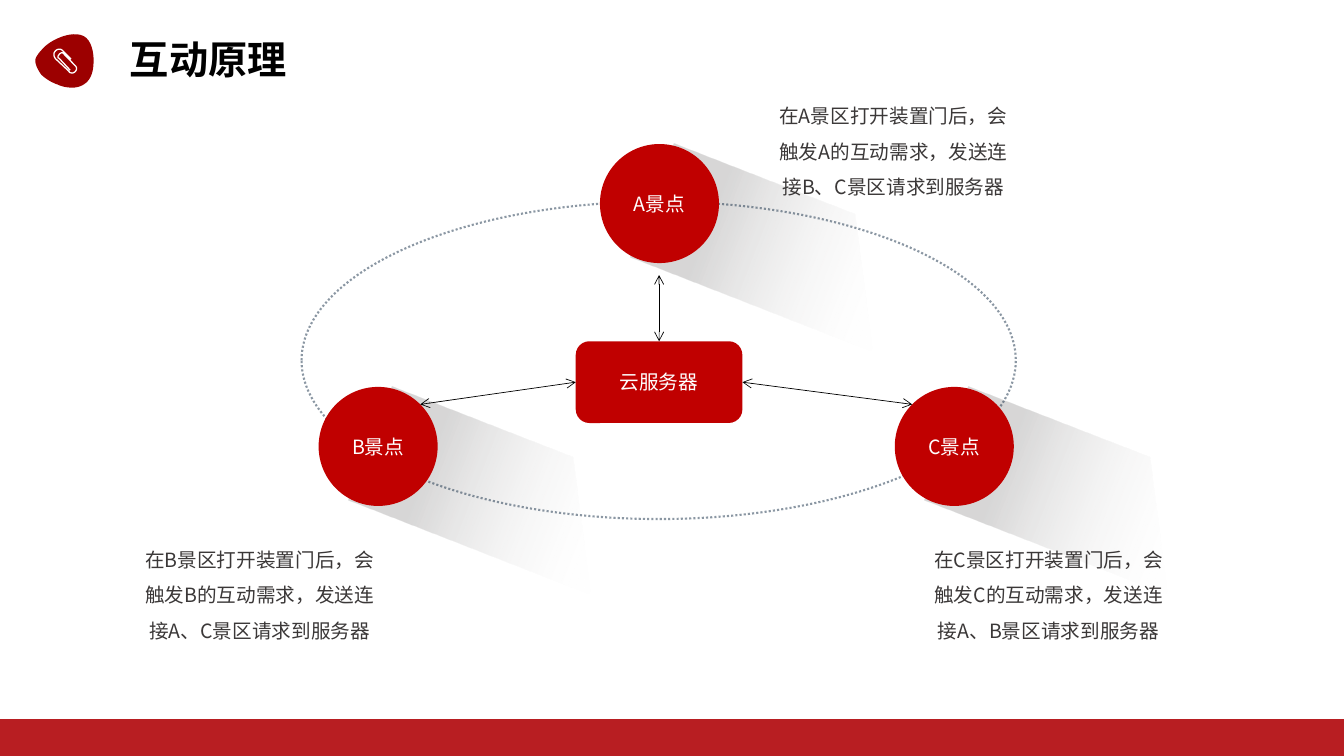
from lxml import etree
from pptx import Presentation
from pptx.dml.color import RGBColor
from pptx.enum.dml import MSO_LINE
from pptx.enum.shapes import MSO_CONNECTOR, MSO_SHAPE
from pptx.enum.text import MSO_ANCHOR, PP_ALIGN
from pptx.oxml import parse_xml
from pptx.oxml.ns import nsdecls, qn
from pptx.util import Cm, Pt

STRAIGHT = MSO_CONNECTOR.STRAIGHT
OVAL, RECTANGLE = MSO_SHAPE.OVAL, MSO_SHAPE.RECTANGLE
ROUNDED = MSO_SHAPE.ROUNDED_RECTANGLE
DOTTED = MSO_LINE.ROUND_DOT
LEFT, CENTER = PP_ALIGN.LEFT, PP_ALIGN.CENTER
TOP, MIDDLE = MSO_ANCHOR.TOP, MSO_ANCHOR.MIDDLE
BOX_TOP, BOX_LEFT, BOX_RIGHT = 0, 1, 3

COLORS = {
    "red": "C00000", "badge": "9C0000", "footer": "B81E22", "white": "FFFFFF",
    "black": "000000", "text": "3B3838", "orbit": "183048", "fade": "F2F2F2",
}
FONT = "Noto Sans CJK SC"
PAGE_WIDTH, PAGE_HEIGHT = 33.87, 19.05
FOOTER_TOP = 18.12
SPOT_SIZE = 3

# name: (circle left, circle top, description left, description top)
SPOTS = {
    "A": (15.12, 3.63, 19.15, 2.21),
    "B": (8.03, 9.75, 3.18, 13.39),
    "C": (22.55, 9.75, 23.06, 13.39),
}
# Corners of the long shadow, measured from the circle's top left
SHADOW = [(1.86, 0), (6.41, 1.77), (6.86, 5.22), (0.76, 2.85)]

# Outlines: a start point, then line (one point) or Bézier (three points) steps
BADGE = [
    [(1.83, 2.21)],
    [(1.68, 2.21), (1.55, 2.18), (1.45, 2.13)],
    [(1.3, 2.08), (1.14, 1.98), (1.04, 1.88)],
    [(0.97, 1.78), (0.89, 1.65), (0.89, 1.52)],
    [(0.89, 1.45), (0.99, 1.32), (1.04, 1.27)],
    [(1.14, 1.14), (1.3, 1.04), (1.45, 0.97)],
    [(1.63, 0.89), (1.9, 0.81), (2.11, 0.91)],
    [(2.31, 1.02), (2.36, 1.32), (2.36, 1.52)],
    [(2.36, 1.78), (2.31, 2.01), (2.11, 2.13)],
    [(2.03, 2.18), (1.93, 2.21), (1.83, 2.21)],
]
PAPERCLIP = [
    [(1.79, 1.49)],
    [(1.61, 1.31)],
    [(1.57, 1.26), (1.54, 1.24), (1.5, 1.24)],
    [(1.42, 1.24), (1.36, 1.31), (1.36, 1.37)],
    [(1.36, 1.41), (1.37, 1.45), (1.41, 1.49)],
    [(1.74, 1.8)],
    [(1.75, 1.83), (1.78, 1.84), (1.82, 1.84)],
    [(1.88, 1.84), (1.93, 1.78), (1.93, 1.73)],
    [(1.93, 1.7), (1.92, 1.68), (1.89, 1.65)],
    [(1.61, 1.36)],
    [(1.6, 1.34), (1.58, 1.33), (1.56, 1.33)],
    [(1.52, 1.33), (1.46, 1.4), (1.46, 1.44)],
    [(1.46, 1.46), (1.47, 1.46), (1.49, 1.47)],
    [(1.77, 1.77)],
]


def color(name):
    return RGBColor.from_string(COLORS[name])


def trace(steps, pieces=8):
    """Turn line and Bézier steps into a list of points."""
    points = list(steps[0])
    for step in steps[1:]:
        if len(step) == 1:
            points += step
            continue
        curve = [points[-1], *step]
        for piece in range(1, pieces + 1):
            t = piece / pieces
            weights = ((1 - t) ** 3, 3 * t * (1 - t) ** 2, 3 * t * t * (1 - t), t ** 3)
            points.append(tuple(
                sum(weight * point[axis] for weight, point in zip(weights, curve))
                for axis in (0, 1)))
    return points


class SlideBuilder:
    """Draws styled elements on one slide; lengths are in centimetres."""

    def __init__(self, slide):
        self.shapes = slide.shapes

    def style(self, shape, fill=None, line=None, width=0.75):
        shape.shadow.inherit = False
        if fill:
            shape.fill.solid()
            shape.fill.fore_color.rgb = color(fill)
        else:
            shape.fill.background()
        if line:
            shape.line.color.rgb = color(line)
            shape.line.width = Pt(width)
        else:
            shape.line.fill.background()

    def add_text(self, shape, text, size, ink, align=CENTER, anchor=MIDDLE,
                 bold=False, spacing=1.0):
        frame = shape.text_frame
        frame.word_wrap = True
        frame.vertical_anchor = anchor
        paragraph = frame.paragraphs[0]
        paragraph.alignment = align
        paragraph.line_spacing = spacing
        run = paragraph.add_run()
        run.text = text
        run.font.name = FONT
        run.font.size = Pt(size)
        run.font.bold = bold
        run.font.color.rgb = color(ink)
        east_asian = etree.SubElement(run.font._element, qn("a:ea"))
        east_asian.set("typeface", FONT)

    def title(self, text, left, top, width, height):
        title = self.shapes.title
        title.left, title.top = Cm(left), Cm(top)
        title.width, title.height = Cm(width), Cm(height)
        self.add_text(title, text, 28, "black", align=LEFT, bold=True)

    def shape(self, kind, left, top, width, height, text=None, fill=None):
        shape = self.shapes.add_shape(kind, Cm(left), Cm(top), Cm(width), Cm(height))
        self.style(shape, fill)
        if text:
            frame = shape.text_frame
            frame.margin_left = frame.margin_right = 0
            self.add_text(shape, text, 14, "white")
        return shape

    def outline(self, points, closed=True, **style):
        points = [(Cm(x), Cm(y)) for x, y in points]
        builder = self.shapes.build_freeform(*points[0])
        builder.add_line_segments(points[1:], close=closed)
        shape = builder.convert_to_shape()
        self.style(shape, **style)
        return shape

    def long_shadow(self, left, top):
        shape = self.outline([(left + x, top + y) for x, y in SHADOW])
        gradient = parse_xml(
            f'<a:gradFill {nsdecls("a")} rotWithShape="1"><a:gsLst>'
            f'<a:gs pos="34000"><a:srgbClr val="{COLORS["text"]}">'
            '<a:alpha val="20000"/></a:srgbClr></a:gs>'
            f'<a:gs pos="100000"><a:srgbClr val="{COLORS["fade"]}">'
            '<a:alpha val="0"/></a:srgbClr></a:gs>'
            '</a:gsLst><a:lin ang="1272000" scaled="0"/></a:gradFill>')
        properties = shape._element.spPr
        properties.replace(properties.find(qn("a:noFill")), gradient)

    def orbit(self, left, top, width, height):
        shape = self.shape(OVAL, left, top, width, height)
        self.style(shape, line="orbit", width=1.5)
        shape.line.dash_style = DOTTED
        ink = shape.line._ln.find(f'.//{qn("a:srgbClr")}')
        etree.SubElement(ink, qn("a:alpha")).set("val", "50000")

    def double_arrow(self, box, side, x, y):
        """Join a side of the box to a point, with an arrowhead at each end."""
        connector = self.shapes.add_connector(STRAIGHT, 0, 0, Cm(x), Cm(y))
        connector.begin_connect(box, side)
        connector.line.color.rgb = color("black")
        connector.line.width = Pt(0.5)
        for end in ("a:headEnd", "a:tailEnd"):
            etree.SubElement(connector.line._ln, qn(end)).set("type", "arrow")
        etree.SubElement(connector._element.spPr, qn("a:effectLst"))

    def description(self, text, left, top):
        box = self.shapes.add_textbox(Cm(left), Cm(top), Cm(6.73), Cm(2.95))
        self.add_text(box, text, 14, "text", anchor=TOP, spacing=1.5)


def main():
    presentation = Presentation()
    presentation.slide_width, presentation.slide_height = Cm(PAGE_WIDTH), Cm(PAGE_HEIGHT)
    builder = SlideBuilder(presentation.slides.add_slide(presentation.slide_layouts[5]))

    for left, top, *_ in SPOTS.values():
        builder.long_shadow(left, top)
    builder.shape(RECTANGLE, 0, FOOTER_TOP, PAGE_WIDTH, PAGE_HEIGHT - FOOTER_TOP,
                  fill="footer")
    builder.title("互动原理", 3.02, 0.76, 8.51, 1.45)
    builder.outline(trace(BADGE), fill="badge")
    builder.outline(trace(PAPERCLIP), closed=False, line="white", width=0.9)

    builder.orbit(7.6, 5.08, 18, 8)
    for name, (left, top, *_) in SPOTS.items():
        builder.shape(OVAL, left, top, SPOT_SIZE, SPOT_SIZE, f"{name}景点", fill="red")
    server = builder.shape(ROUNDED, 14.51, 8.6, 4.2, 2.06, "云服务器", fill="red")
    for side, x, y in ((BOX_TOP, 16.61, 6.93), (BOX_LEFT, 10.59, 10.19),
                       (BOX_RIGHT, 22.99, 10.19)):
        builder.double_arrow(server, side, x, y)

    for name, (_, _, left, top) in SPOTS.items():
        others = "、".join(other for other in SPOTS if other != name)
        builder.description(
            f"在{name}景区打开装置门后，会触发{name}的互动需求，"
            f"发送连接{others}景区请求到服务器", left, top)

    presentation.save("out.pptx")


if __name__ == "__main__":
    main()
